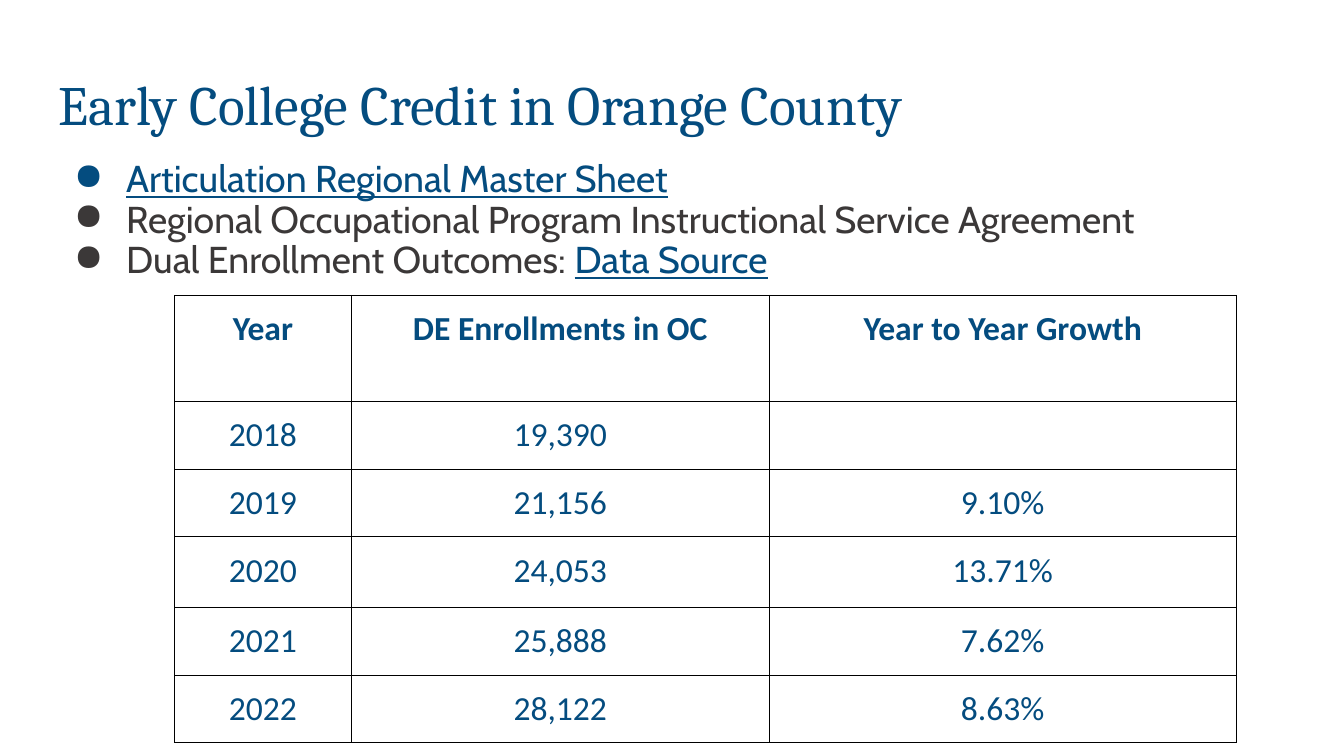
from lxml.etree import SubElement
from pptx import Presentation
from pptx.dml.color import RGBColor
from pptx.enum.text import MSO_ANCHOR, PP_ALIGN
from pptx.oxml import parse_xml
from pptx.oxml.ns import nsdecls, qn
from pptx.util import Cm, Pt

COLORS = {"blue": "044C7F", "gray": "3B3838", "black": "000000"}
INSETS = {f"margin_{side}": Cm(0.34) for side in ("left", "right", "top", "bottom")}


def set_values(target, values):
    for name, value in values.items():
        setattr(target, name, value)


def add_span(para, text, color, **font_values):
    span = para.add_run()
    span.text = text
    span.font.color.rgb = RGBColor.from_string(COLORS[color])
    set_values(span.font, font_values)


deck = Presentation()
set_values(deck, {"slide_width": Cm(33.87), "slide_height": Cm(19.05)})
page = deck.slides.add_slide(deck.slide_layouts[5])

# Title
title = page.shapes.title
set_values(title, {"left": Cm(1.14), "top": Cm(1.65), "width": Cm(31.55), "height": Cm(2.13)})
set_values(title.text_frame, {**INSETS, "vertical_anchor": MSO_ANCHOR.MIDDLE})
para = title.text_frame.paragraphs[0]
set_values(para, {"alignment": PP_ALIGN.LEFT, "line_spacing": 0.9})
add_span(para, "Early College Credit in Orange County", "blue", name="Cambria", size=Pt(39.6))

# Bullet list: each item is a list of (text, color, underlined)
ITEMS = [
    [("Articulation Regional Master Sheet", "blue", True)],
    [("Regional Occupational Program Instructional Service Agreement", "gray", False)],
    [("Dual Enrollment Outcomes: ", "gray", False), ("Data Source", "blue", True)],
]
box = page.shapes.add_textbox(Cm(1.14), Cm(3.71), Cm(31.55), Cm(3.6))
frame = box.text_frame
set_values(frame, {**INSETS, "word_wrap": True})
for index, item in enumerate(ITEMS):
    para = frame.add_paragraph() if index else frame.paragraphs[0]
    para.line_spacing = 0.9
    properties = para._p.get_or_add_pPr()
    properties.set("marL", str(Cm(1.7)))
    properties.set("indent", str(Cm(-1.32)))
    SubElement(properties, qn("a:buChar"), char="●")
    for text, color, underlined in item:
        add_span(para, text, color, name="Cabin", size=Pt(26.7), underline=underlined)

# Enrollment table
ROWS = [
    ("Year", "DE Enrollments in OC", "Year to Year Growth"),
    ("2018", "19,390", ""),
    ("2019", "21,156", "9.10%"),
    ("2020", "24,053", "13.71%"),
    ("2021", "25,888", "7.62%"),
    ("2022", "28,122", "8.63%"),
]
COLUMN_WIDTHS = [4.45, 10.54, 11.76]
ROW_HEIGHTS = [2.67, 1.71, 1.71, 1.77, 1.71, 1.71]
table = page.shapes.add_table(
    len(ROWS), len(COLUMN_WIDTHS), Cm(4.4), Cm(7.44),
    Cm(sum(COLUMN_WIDTHS)), Cm(sum(ROW_HEIGHTS))).table
set_values(table, {"first_row": False, "horz_banding": False})
for column, width in zip(table.columns, COLUMN_WIDTHS):
    column.width = Cm(width)
for row_index, (row, height, texts) in enumerate(zip(table.rows, ROW_HEIGHTS, ROWS)):
    row.height = Cm(height)
    for cell, text in zip(row.cells, texts):
        set_values(cell, INSETS)
        for side in "LRTB":
            cell._tc.get_or_add_tcPr().append(parse_xml(
                f'<a:ln{side} {nsdecls("a")} w="{Pt(0.75)}"><a:solidFill>'
                f'<a:srgbClr val="{COLORS["black"]}"/></a:solidFill></a:ln{side}>'))
        cell.fill.background()
        if text:
            para = cell.text_frame.paragraphs[0]
            para.alignment = PP_ALIGN.CENTER
            add_span(para, text, "blue", name="Calibri", size=Pt(24), bold=row_index == 0)

deck.save("out.pptx")
